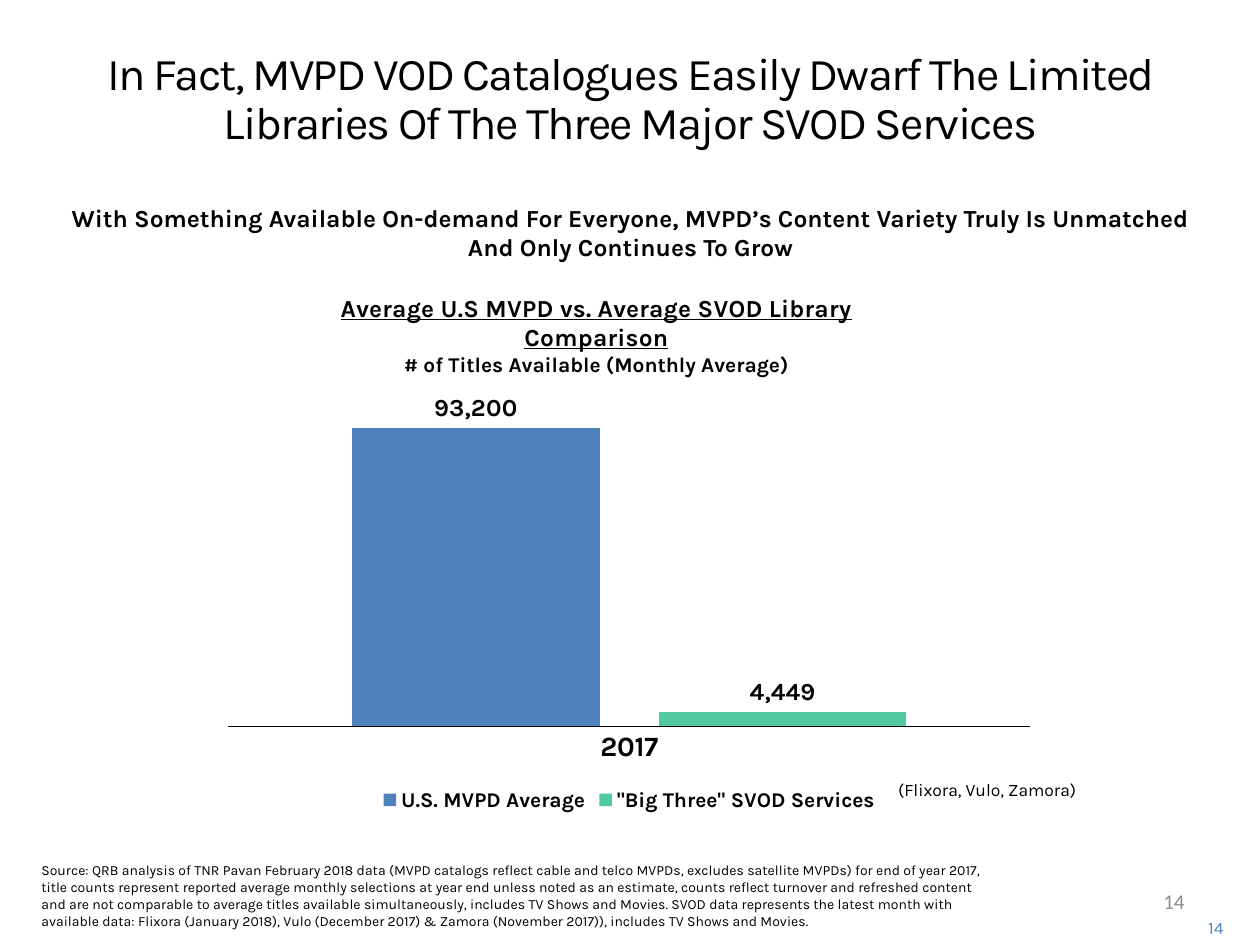
"""Build a slide comparing cable and streaming library sizes."""
import pptx
import pptx.chart.data
import pptx.dml.color
import pptx.enum.chart
import pptx.enum.text
import pptx.oxml
import pptx.oxml.ns
import pptx.util

Pt = pptx.util.Pt
RGB = pptx.dml.color.RGBColor
Align = pptx.enum.text.PP_ALIGN
Anchor = pptx.enum.text.MSO_ANCHOR
Kind = pptx.enum.chart
BLACK = RGB(0x00, 0x00, 0x00)
BLUE = RGB(0x4F, 0x81, 0xBD)
GREEN = RGB(0x50, 0xC8, 0xA0)
SKY = RGB(0x50, 0x8A, 0xBA)
GRAY = RGB(0x8C, 0x8C, 0x8C)

deck = pptx.Presentation()
deck.slide_width = pptx.util.Inches(10)
deck.slide_height = pptx.util.Inches(7.5)
wide, high = deck.slide_width, deck.slide_height
slide = deck.slides.add_slide(deck.slide_layouts[5])


def style(font, size, color=BLACK, bold=False, face="Karla"):
    font.size = Pt(size)
    font.name = face
    font.bold = bold
    font.color.rgb = color


def layout(owner, before, **shares):
    parts = "".join(f'<c:{key} val="{val}"/>' for key, val in shares.items())
    node = pptx.oxml.parse_xml(
        f'<c:layout {pptx.oxml.ns.nsdecls("c")}><c:manualLayout>{parts}'
        "</c:manualLayout></c:layout>")
    for old in owner.findall(pptx.oxml.ns.qn("c:layout")):
        owner.remove(old)
    owner.find(pptx.oxml.ns.qn(before)).addprevious(node)


title = slide.shapes.title
title.left, title.top = int(wide * 0.019), int(high * 0.044)
title.width, title.height = int(wide * 0.963), int(high * 0.123)
title.text_frame.text = ("In Fact, MVPD VOD Catalogues Easily Dwarf The Limited "
                         "Libraries Of The Three Major SVOD Services")
title.text_frame.vertical_anchor = Anchor.MIDDLE
head = title.text_frame.paragraphs[0]
head.alignment = Align.CENTER
head.line_spacing = Pt(28)
style(head.runs[0].font, 26)
head.runs[0].font._element.set("spc", "-100")

data = pptx.chart.data.CategoryChartData(number_format="#,##0")
data.categories = ["2017"]
data.add_series("U.S. MVPD Average", [93200])
data.add_series('"Big Three" SVOD Services', [4449])
chart = slide.shapes.add_chart(
    Kind.XL_CHART_TYPE.COLUMN_CLUSTERED, int(wide * 0.168), int(high * 0.3),
    int(wide * 0.663), int(high * 0.565), data).chart
style(chart.font, 10)

chart.has_title = True
frame = chart.chart_title.text_frame
frame.text = ("Average U.S MVPD vs. Average SVOD Library Comparison\n"
              "# of Titles Available (Monthly Average)")
for line, size in zip(frame.paragraphs, (14, 12)):
    style(line.runs[0].font, size, bold=True)
    line.runs[0].font.underline = size == 14
chart.chart_title.include_in_layout = False
layout(chart.chart_title._element, "c:overlay",
       xMode="edge", yMode="edge", x=0.15, y=0.01)

chart.has_legend = True
chart.legend.position = Kind.XL_LEGEND_POSITION.BOTTOM
chart.legend.include_in_layout = False
style(chart.legend.font, 12, bold=True)

years = chart.category_axis
years.major_tick_mark = Kind.XL_TICK_MARK.NONE
years.format.line.color.rgb = BLACK
years.format.line.width = Pt(0.75)
style(years.tick_labels.font, 16, bold=True)
scale = chart.value_axis
scale.visible = False
scale.has_major_gridlines = False
scale.minimum_scale, scale.maximum_scale = 0, 100000

plot = chart.plots[0]
plot.gap_width, plot.overlap = 100, -24
plot.vary_by_categories = False
for bars, color in zip(plot.series, (BLUE, GREEN)):
    bars.format.fill.solid()
    bars.format.fill.fore_color.rgb = color
    tags = bars.data_labels
    tags.show_value = True
    tags.number_format = "#,##0"
    tags.number_format_is_linked = False
    tags.position = Kind.XL_LABEL_POSITION.OUTSIDE_END
    style(tags.font, 14, bold=True)
layout(plot._element.getparent(), "c:barChart", layoutTarget="inner",
       xMode="edge", yMode="edge", x=0.02, y=0.23, w=0.96, h=0.6)

source = (
    "Source: QRB analysis of TNR Pavan February 2018 data (MVPD catalogs reflect "
    "cable and telco MVPDs, excludes satellite MVPDs) for end of year 2017, title "
    "counts represent reported average monthly selections at year end unless noted "
    "as an estimate, counts reflect turnover and refreshed content and are not "
    "comparable to average titles available simultaneously, includes TV Shows and "
    "Movies. SVOD data represents the latest month with available data: Flixora "
    "(January 2018), Vulo (December 2017) & Zamora (November 2017)), includes TV "
    "Shows and Movies.")
claim = ("With Something Available On-demand For Everyone, MVPD’s Content Variety "
         "Truly Is Unmatched And Only Continues To Grow")
notes = [
    (0.92, 0.965, 0.061, 0.033, "14", 10, SKY, False, "Karla", Align.RIGHT),
    (0.717, 0.927, 0.233, 0.053, "14", 12, GRAY, False, "Calibri", Align.RIGHT),
    (0.035, 0.208, 0.931, 0.076, claim, 14, BLACK, True, "Karla", Align.CENTER),
    (0.023, 0.905, 0.78, 0.085, source, 8, BLACK, False, "Karla", Align.LEFT),
    (0.703, 0.817, 0.238, 0.036, "(Flixora, Vulo, Zamora)", 10, BLACK, False,
     "Karla", Align.LEFT),
]
for x, y, w, h, words, size, color, bold, face, side in notes:
    box = slide.shapes.add_textbox(
        int(wide * x), int(high * y), int(wide * w), int(high * h)).text_frame
    box.word_wrap = True
    box.vertical_anchor = Anchor.MIDDLE
    box.text = words
    box.paragraphs[0].alignment = side
    style(box.paragraphs[0].runs[0].font, size, color, bold, face)

deck.save("out.pptx")
